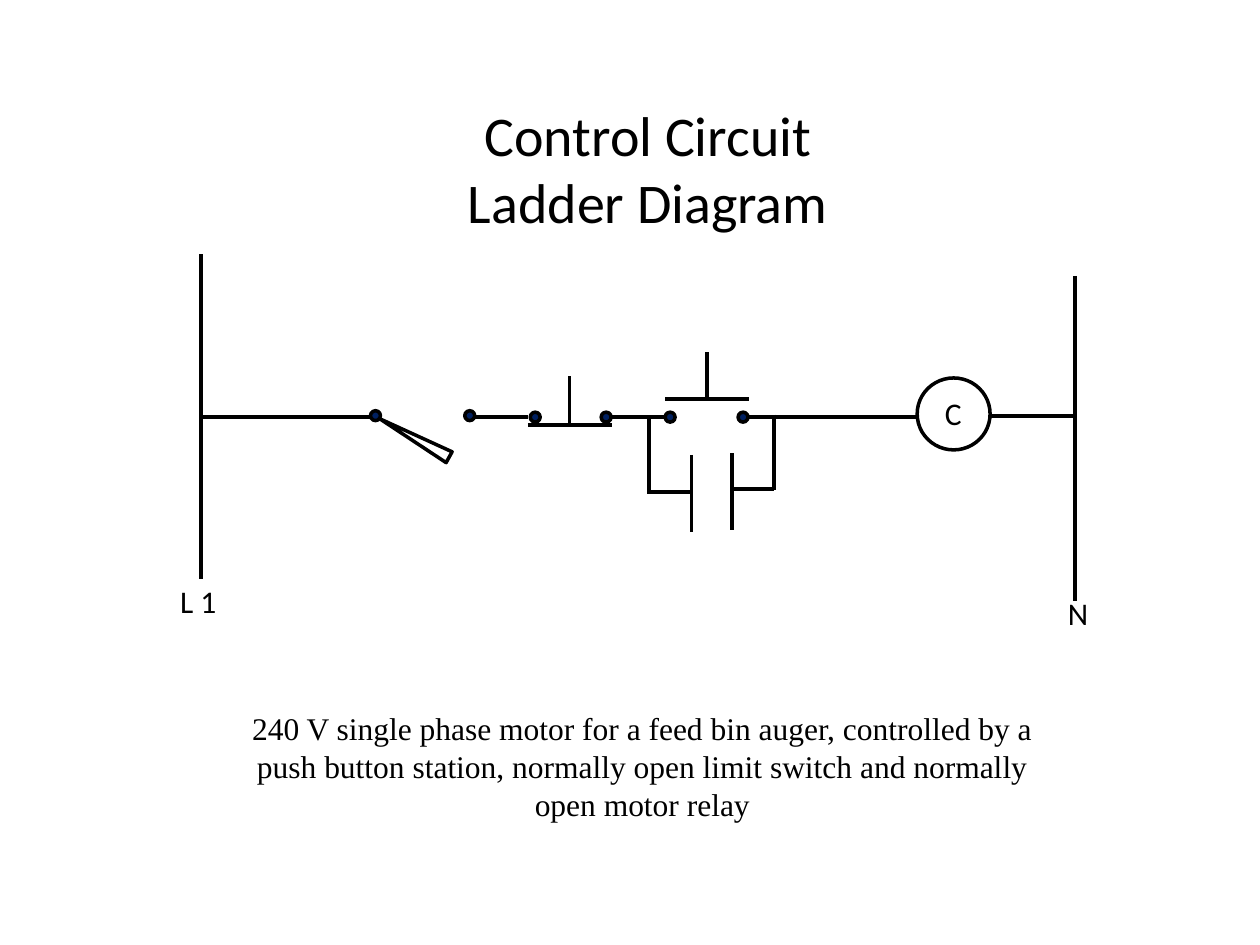
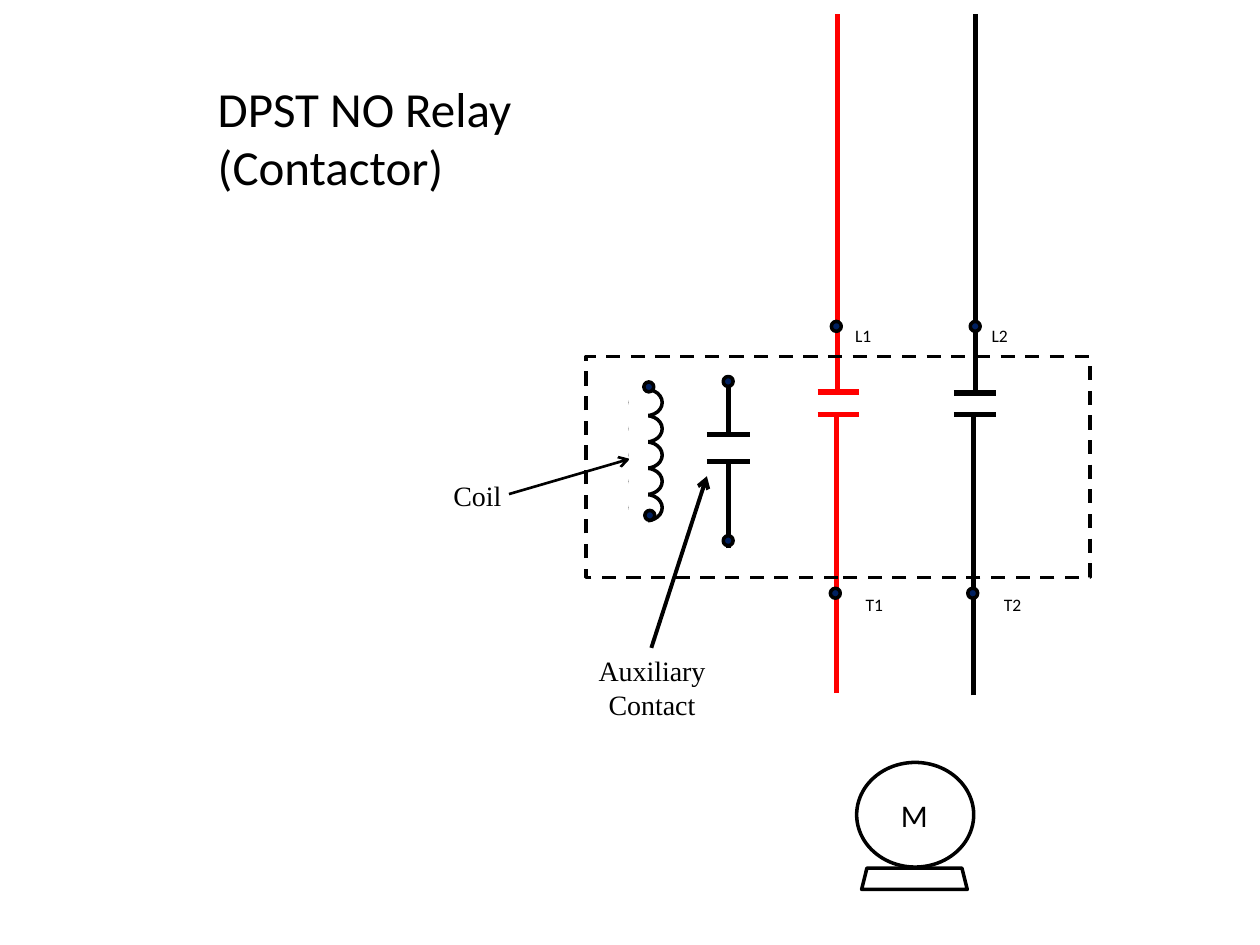
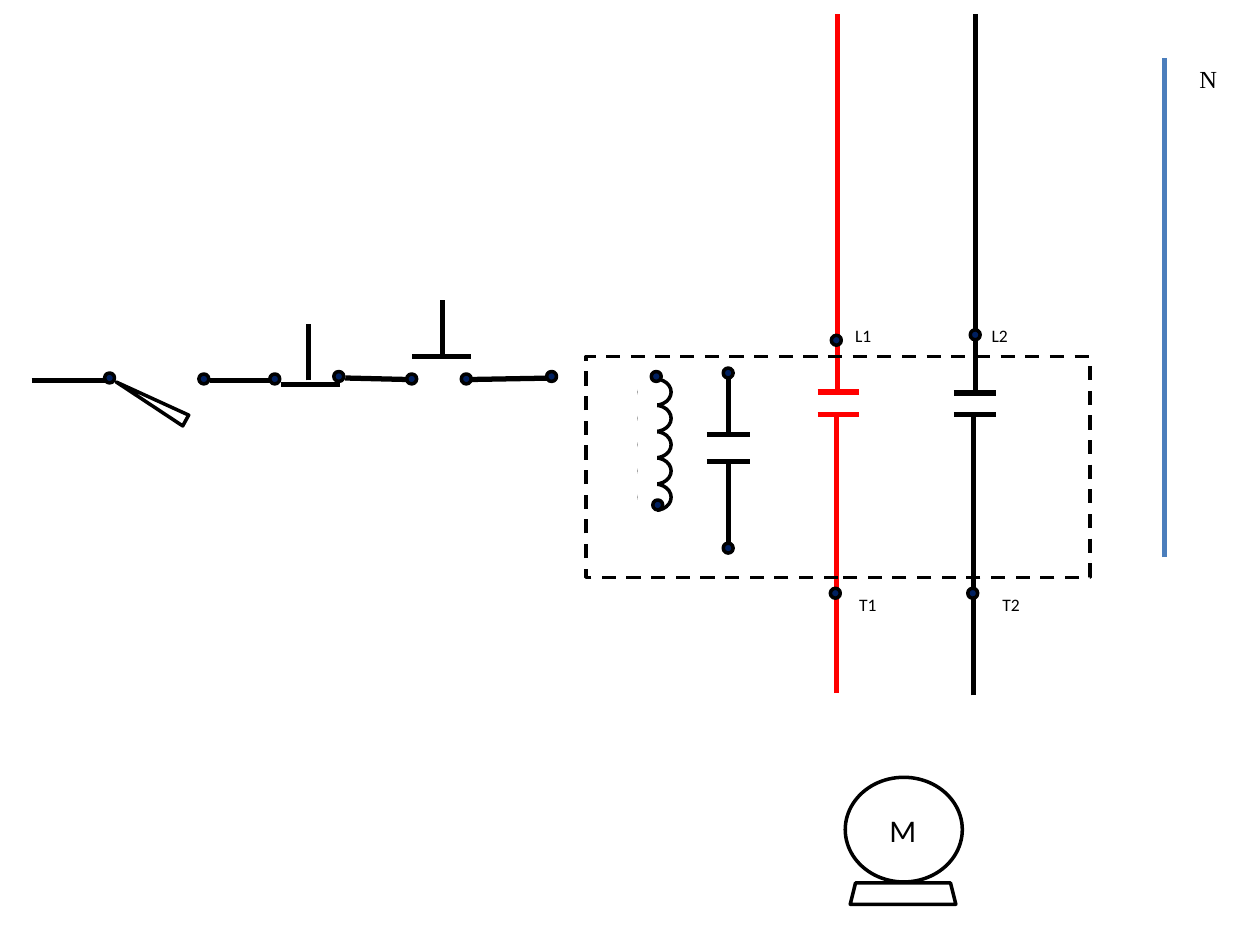
"""Build three slides on the control circuit and contactor of a feed bin auger motor."""
from lxml.etree import SubElement
from pptx import Presentation
from pptx.dml.color import RGBColor
from pptx.enum.dml import MSO_LINE
from pptx.enum.shapes import MSO_CONNECTOR, MSO_SHAPE
from pptx.enum.text import PP_ALIGN
from pptx.oxml.ns import qn
from pptx.util import Cm, Pt

BLACK, WHITE, RED, BLUE, NAVY = "000000", "FFFFFF", "FF0000", "4B7EBC", "002060"
SANS, SERIF = "Calibri", "Times New Roman"


def paint(fill, color):
    if color is None:
        fill.background()
    else:
        fill.solid()
        fill.fore_color.rgb = RGBColor.from_string(color)


def add_text(slide, text, left, top, width, height, size=18, font=SANS, align=PP_ALIGN.LEFT):
    box = slide.shapes.add_textbox(Cm(left), Cm(top), Cm(width), Cm(height))
    box.text_frame.word_wrap = True
    paragraph = box.text_frame.paragraphs[0]
    paragraph.alignment = align
    run = paragraph.add_run()
    run.text = text
    run.font.size = Pt(size)
    run.font.name = font
    paint(run.font.fill, BLACK)


presentation = Presentation()
presentation.slide_width, presentation.slide_height = Cm(25.4), Cm(19.05)
ladder, contactor, wiring = [
    presentation.slides.add_slide(presentation.slide_layouts[6]) for _ in range(3)
]

ladder_wires = [
    (4.06, 8.41, 7.47, 8.41), (9.47, 8.41, 10.64, 8.41), (12.34, 8.41, 13.39, 8.41),
    (15.09, 8.41, 18.49, 8.41), (19.96, 8.38, 21.67, 8.38),
    (10.64, 8.56, 12.34, 8.56), (11.48, 8.56, 11.48, 7.57),
    (13.41, 8.05, 15.09, 8.05), (14.25, 8.05, 14.25, 7.09),
    (4.06, 5.13, 4.06, 11.68), (21.67, 5.56, 21.67, 12.12),
    (13.08, 8.41, 13.08, 9.96), (15.6, 8.36, 15.6, 9.88),
    (13.06, 9.91, 13.92, 9.91), (14.76, 9.86, 15.6, 9.86),
    (13.94, 9.17, 13.94, 10.72), (14.76, 9.14, 14.76, 10.69),
]
station_wires = [
    (0.64, 7.67, 2.29, 7.67), (4.24, 7.67, 5.44, 7.67),
    (5.66, 7.75, 6.86, 7.75), (6.22, 7.67, 6.22, 6.53),
    (6.96, 7.62, 8.2, 7.65), (8.31, 7.19, 9.5, 7.19),
    (8.92, 7.19, 8.92, 6.05), (9.5, 7.65, 11.2, 7.62),
]
line_1_wires = [
    (16.89, 7.9, 16.89, 0.28), (16.48, 7.9, 17.32, 7.9),
    (16.48, 8.36, 17.32, 8.36), (16.87, 13.97, 16.87, 8.36),
]
line_2_wires = [
    (19.66, 7.9, 19.66, 0.28), (19.23, 7.92, 20.07, 7.92),
    (19.23, 8.36, 20.07, 8.36), (19.63, 14.02, 19.63, 8.36),
]
auxiliary_wires = [
    (14.68, 8.76, 14.68, 7.62), (14.25, 8.76, 15.11, 8.76),
    (14.25, 9.3, 15.11, 9.3), (14.68, 11.05, 14.68, 9.35),
]
wire_groups = [
    (ladder, BLACK, 2.25, False, ladder_wires),
    (wiring, BLACK, 3, False, station_wires),
    (wiring, BLUE, 3, False, [(23.47, 11.23, 23.47, 1.17)]),
    (contactor, BLACK, 1.5, True, [(10.26, 9.96, 12.7, 9.25)]),
    (contactor, BLACK, 2.25, True, [(13.13, 13.06, 14.25, 9.6)]),
]
for slide in (contactor, wiring):
    wire_groups += [
        (slide, BLACK, 3, False, line_2_wires + auxiliary_wires),
        (slide, RED, 3, False, line_1_wires),
    ]

for slide, color, weight, arrow, wires in wire_groups:
    for start_x, start_y, end_x, end_y in wires:
        wire = slide.shapes.add_connector(
            MSO_CONNECTOR.STRAIGHT, Cm(start_x), Cm(start_y), Cm(end_x), Cm(end_y)
        )
        paint(wire.line.fill, color)
        wire.line.width = Pt(weight)
        if arrow:
            SubElement(wire.line._get_or_add_ln(), qn("a:tailEnd"), type="arrow")
        SubElement(wire._element.spPr, qn("a:effectLst"))

symbols = [
    (ladder, MSO_SHAPE.ISOSCELES_TRIANGLE, 8.23, 8.03, 0.25, 1.6, None, BLACK),
    (ladder, MSO_SHAPE.OVAL, 18.49, 7.62, 1.47, 1.45, None, BLACK),
    (wiring, MSO_SHAPE.ISOSCELES_TRIANGLE, 2.92, 7.29, 0.25, 1.6, None, BLACK),
]
for slide, coil_left, coil_top, motor_left, motor_top in (
    (contactor, 12.71, 7.85, 17.27, 15.37),
    (wiring, 12.89, 7.64, 17.04, 15.67),
):
    symbols += [
        (slide, MSO_SHAPE.RECTANGLE, 11.81, 7.19, 10.16, 4.45, None, BLACK),
        (slide, MSO_SHAPE.OVAL, motor_left, motor_top, 2.36, 2.11, None, BLACK),
        (slide, MSO_SHAPE.TRAPEZOID, motor_left + 0.1, motor_top + 2.13, 2.13, 0.43, None, BLACK),
    ]
    for turn in range(5):
        turn_top = coil_top + turn * 0.53
        symbols += [
            (slide, MSO_SHAPE.OVAL, coil_left, turn_top, 0.64, 0.53, WHITE, BLACK),
            (slide, MSO_SHAPE.RECTANGLE, coil_left, turn_top - 0.13, 0.32, 0.99, WHITE, WHITE),
        ]
    add_text(slide, "M", motor_left + 0.64, motor_top + 0.56, 0.99, 1.02)

terminals = [
    (ladder, [(7.47, 8.28), (9.37, 8.28), (10.69, 8.31), (12.12, 8.31),
              (13.41, 8.31), (14.88, 8.31)]),
    (contactor, [(12.98, 7.7), (13, 10.29), (14.58, 7.59), (14.58, 10.8),
                 (16.76, 6.48), (19.56, 6.48), (16.74, 11.86), (19.51, 11.86)]),
    (wiring, [(2.11, 7.52), (4.01, 7.54), (5.44, 7.54), (6.73, 7.49), (8.2, 7.54),
              (9.3, 7.54), (11.02, 7.49), (13.13, 7.49), (13.16, 10.08),
              (14.58, 7.42), (14.58, 10.95), (16.76, 6.76), (19.56, 6.65),
              (16.74, 11.86), (19.51, 11.86)]),
]
for slide, points in terminals:
    symbols += [(slide, MSO_SHAPE.OVAL, left, top, 0.2, 0.2, NAVY, BLACK) for left, top in points]

for slide, kind, left, top, width, height, fill, outline in symbols:
    shape = slide.shapes.add_shape(kind, Cm(left), Cm(top), Cm(width), Cm(height))
    shape.shadow.inherit = False
    paint(shape.fill, fill)
    paint(shape.line.fill, outline)
    shape.line.width = Pt(2)
    if kind == MSO_SHAPE.ISOSCELES_TRIANGLE:
        shape.rotation = 299
    if kind == MSO_SHAPE.RECTANGLE and fill is None:
        shape.line.dash_style = MSO_LINE.DASH

add_text(ladder, "Control Circuit Ladder Diagram", 8.33, 1.9, 9.47, 3,
         size=32, align=PP_ALIGN.CENTER)
add_text(ladder, "L 1", 3.38, 11.61, 1.37, 1.02)
add_text(ladder, "C", 18.8, 7.82, 0.84, 1.02)
add_text(ladder, "N", 21.28, 11.86, 1.05, 1.02)
add_text(ladder, "240 V single phase motor for a feed bin auger, controlled by a push button "
         "station, normally open limit switch and normally open motor relay",
         4.24, 14.17, 17.42, 2.57, font=SERIF, align=PP_ALIGN.CENTER)

add_text(contactor, "DPST NO Relay (Contactor)", 4.14, 1.45, 8.56, 2.64, size=28)
add_text(contactor, "Coil", 8.89, 9.53, 1.7, 0.94, size=16, font=SERIF)
add_text(contactor, "Auxiliary Contact", 11.71, 13.06, 2.87, 1.63,
         size=16, font=SERIF, align=PP_ALIGN.CENTER)
add_text(wiring, "N", 23.93, 1.17, 0.84, 0.86, size=14, font=SERIF)

for slide, t1_left, t2_left in ((contactor, 17.2, 19.99), (wiring, 17.07, 19.96)):
    for label, left, top in (("L1", 16.99, 6.43), ("L2", 19.74, 6.43),
                             ("T1", t1_left, 11.86), ("T2", t2_left, 11.86)):
        add_text(slide, label, left, top, 0.99, 0.69, size=10)

presentation.save("out.pptx")
